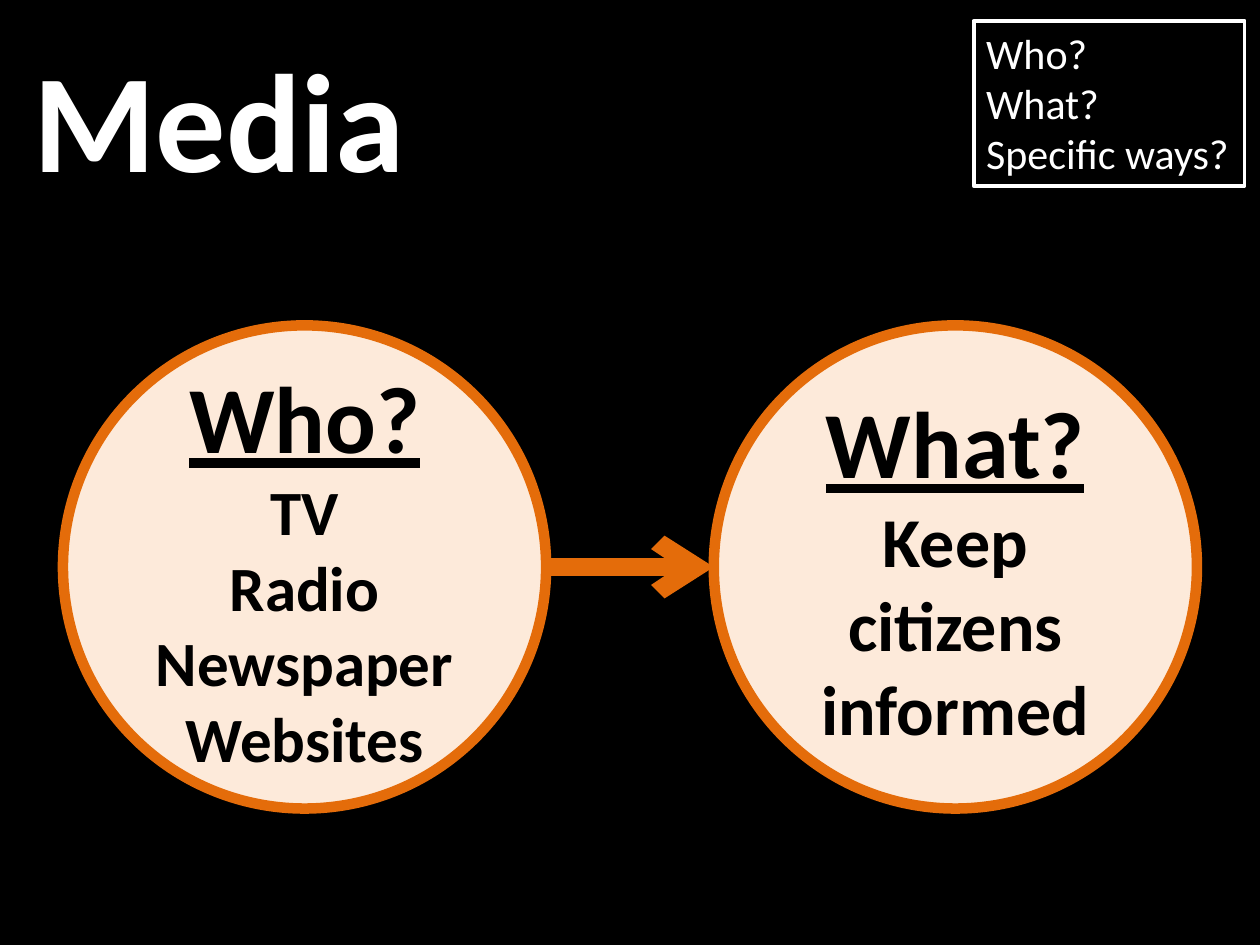
"""Build the Media slide: who the media are and what they do."""
from dataclasses import dataclass

from lxml import etree
from pptx import Presentation
from pptx.dml.color import RGBColor
from pptx.enum import shapes, text
from pptx.oxml import ns
from pptx.slide import Slide
from pptx.text.text import TextFrame
from pptx.util import Cm, Pt


@dataclass(frozen=True)
class Theme:
    """Colours, type sizes and line widths of the deck."""
    font: str = "Calibri"
    black: RGBColor = RGBColor(0x00, 0x00, 0x00)
    white: RGBColor = RGBColor(0xFF, 0xFF, 0xFF)
    orange: RGBColor = RGBColor(0xE4, 0x6C, 0x0A)
    peach: RGBColor = RGBColor(0xFD, 0xEA, 0xDA)
    title: float = 80
    heading: float = 54
    agenda: float = 24
    ring: float = 6
    arrow: float = 10.25
    frame: float = 2.25


@dataclass(frozen=True)
class Line:
    """One paragraph of text and its look."""
    words: str
    size: float
    color: RGBColor
    bold: bool = False
    underline: bool = False


@dataclass(frozen=True)
class Circle:
    """A question with its answers."""
    left: float
    heading: str
    answers: tuple[str, ...]
    size: float


THEME = Theme()
DIAMETER = 9.74
CIRCLE_TOP = 6.56
CIRCLES = (
    Circle(1.27, "Who?", ("TV", "Radio", "Newspaper", "Websites"), 36),
    Circle(14.39, "What?", ("Keep citizens", "informed"), 40),
)
AGENDA = ("Who?", "What?", "Specific ways?")


def write(frame: TextFrame, lines: list[Line], align: text.PP_ALIGN) -> None:
    """Fill a text frame with one paragraph per line."""
    for index, line in enumerate(lines):
        para = frame.add_paragraph() if index else frame.paragraphs[0]
        para.alignment = align
        span = para.add_run()
        span.text = line.words
        span.font.name = THEME.font
        span.font.size = Pt(line.size)
        span.font.bold = line.bold
        span.font.underline = line.underline
        span.font.color.rgb = line.color


def draw_title(page: Slide, words: str) -> None:
    """Place and format the title placeholder."""
    title = page.shapes.title
    title.left, title.top, title.width, title.height = Cm(0.42), Cm(0.76), Cm(22.86), Cm(3.18)
    title.text_frame.auto_size = text.MSO_AUTO_SIZE.NONE
    title.text_frame.vertical_anchor = text.MSO_ANCHOR.MIDDLE
    write(title.text_frame, [Line(words, THEME.title, THEME.white, bold=True)], text.PP_ALIGN.LEFT)


def draw_circle(page: Slide, circle: Circle) -> None:
    """Draw a ringed circle with a heading and its answers."""
    box = page.shapes.add_shape(shapes.MSO_SHAPE.OVAL, Cm(circle.left), Cm(CIRCLE_TOP),
                                Cm(DIAMETER), Cm(DIAMETER))
    box.shadow.inherit = False
    box.fill.solid()
    box.fill.fore_color.rgb = THEME.peach
    box.line.color.rgb = THEME.orange
    box.line.width = Pt(THEME.ring)
    box.text_frame.word_wrap = True
    box.text_frame.vertical_anchor = text.MSO_ANCHOR.MIDDLE
    heading = Line(circle.heading, THEME.heading, THEME.black, bold=True, underline=True)
    answers = [Line(words, circle.size, THEME.black, bold=True) for words in circle.answers]
    write(box.text_frame, [heading, *answers], text.PP_ALIGN.CENTER)


def draw_arrow(page: Slide, source: Circle, target: Circle) -> None:
    """Join two circles with an open arrow at mid height."""
    middle = Cm(CIRCLE_TOP + DIAMETER / 2)
    arrow = page.shapes.add_connector(shapes.MSO_CONNECTOR.STRAIGHT, Cm(source.left + DIAMETER),
                                      middle, Cm(target.left), middle)
    arrow.line.color.rgb = THEME.orange
    arrow.line.width = Pt(THEME.arrow)
    etree.SubElement(arrow.line._get_or_add_ln(), ns.qn("a:tailEnd"), type="arrow")
    etree.SubElement(arrow._element.spPr, ns.qn("a:effectLst"))


def draw_agenda(page: Slide, questions: tuple[str, ...]) -> None:
    """Draw the framed list of questions in the corner."""
    box = page.shapes.add_textbox(Cm(19.63), Cm(0.42), Cm(5.46), Cm(3.33))
    box.line.color.rgb = THEME.white
    box.line.width = Pt(THEME.frame)
    box.text_frame.word_wrap = False
    box.text_frame.auto_size = text.MSO_AUTO_SIZE.SHAPE_TO_FIT_TEXT
    lines = [Line(words, THEME.agenda, THEME.white) for words in questions]
    write(box.text_frame, lines, text.PP_ALIGN.LEFT)


def main() -> None:
    """Build and save the deck."""
    deck = Presentation()
    deck.slide_width, deck.slide_height = Cm(25.4), Cm(19.05)
    page = deck.slides.add_slide(deck.slide_layouts.get_by_name("Title Only"))
    page.background.fill.solid()
    page.background.fill.fore_color.rgb = THEME.black
    draw_title(page, "Media")
    for circle in CIRCLES:
        draw_circle(page, circle)
    draw_arrow(page, *CIRCLES)
    draw_agenda(page, AGENDA)
    deck.save("out.pptx")


if __name__ == "__main__":
    main()
